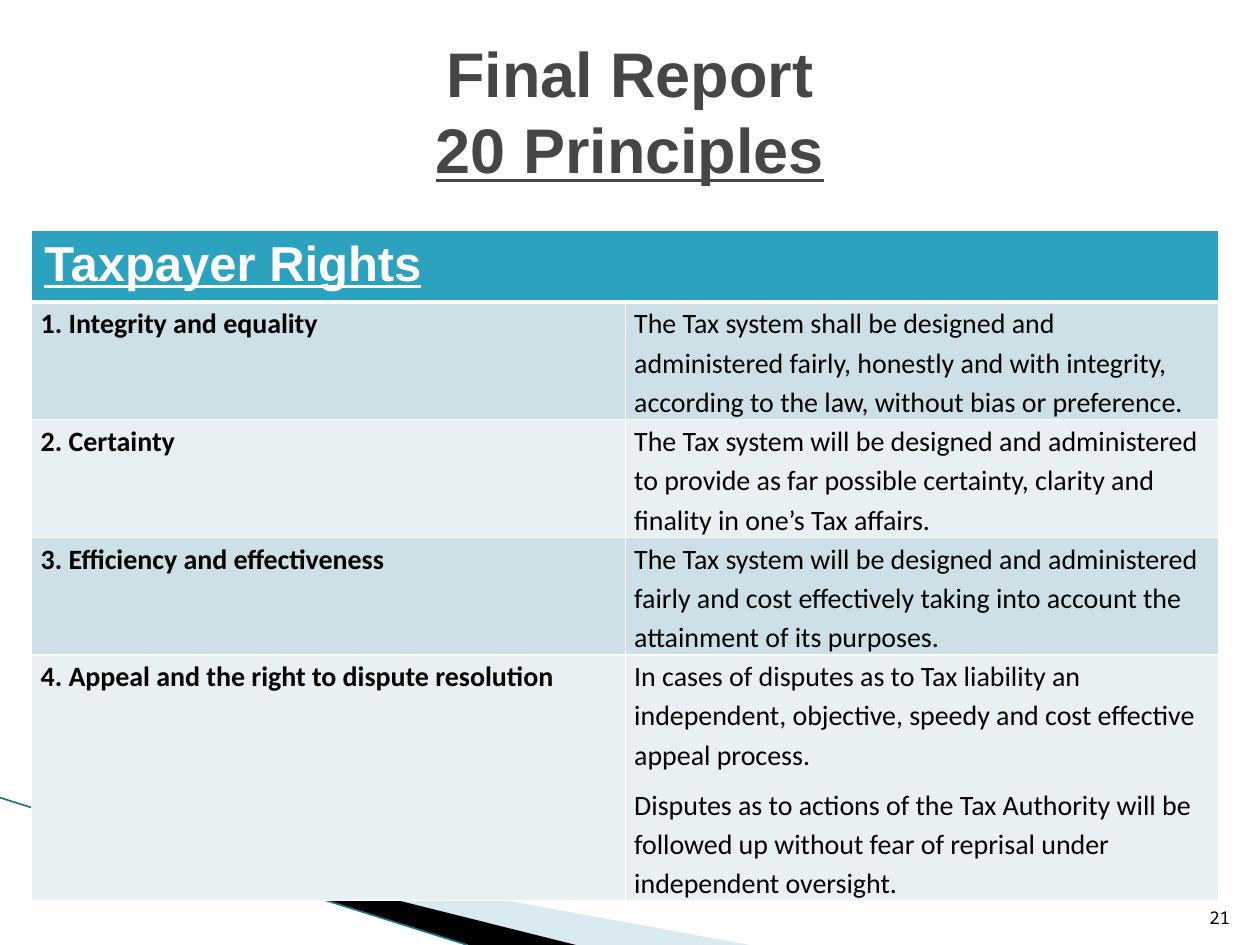
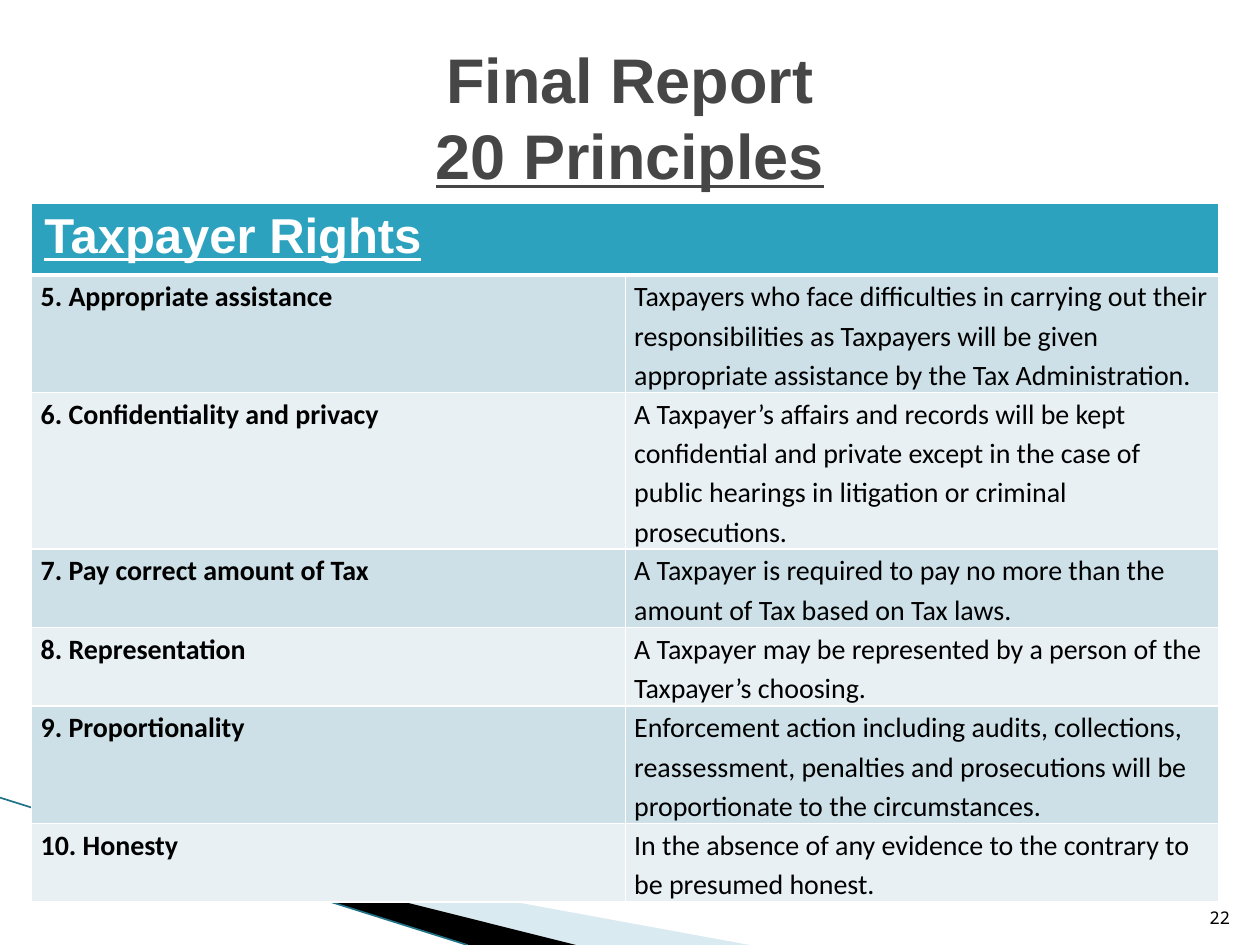
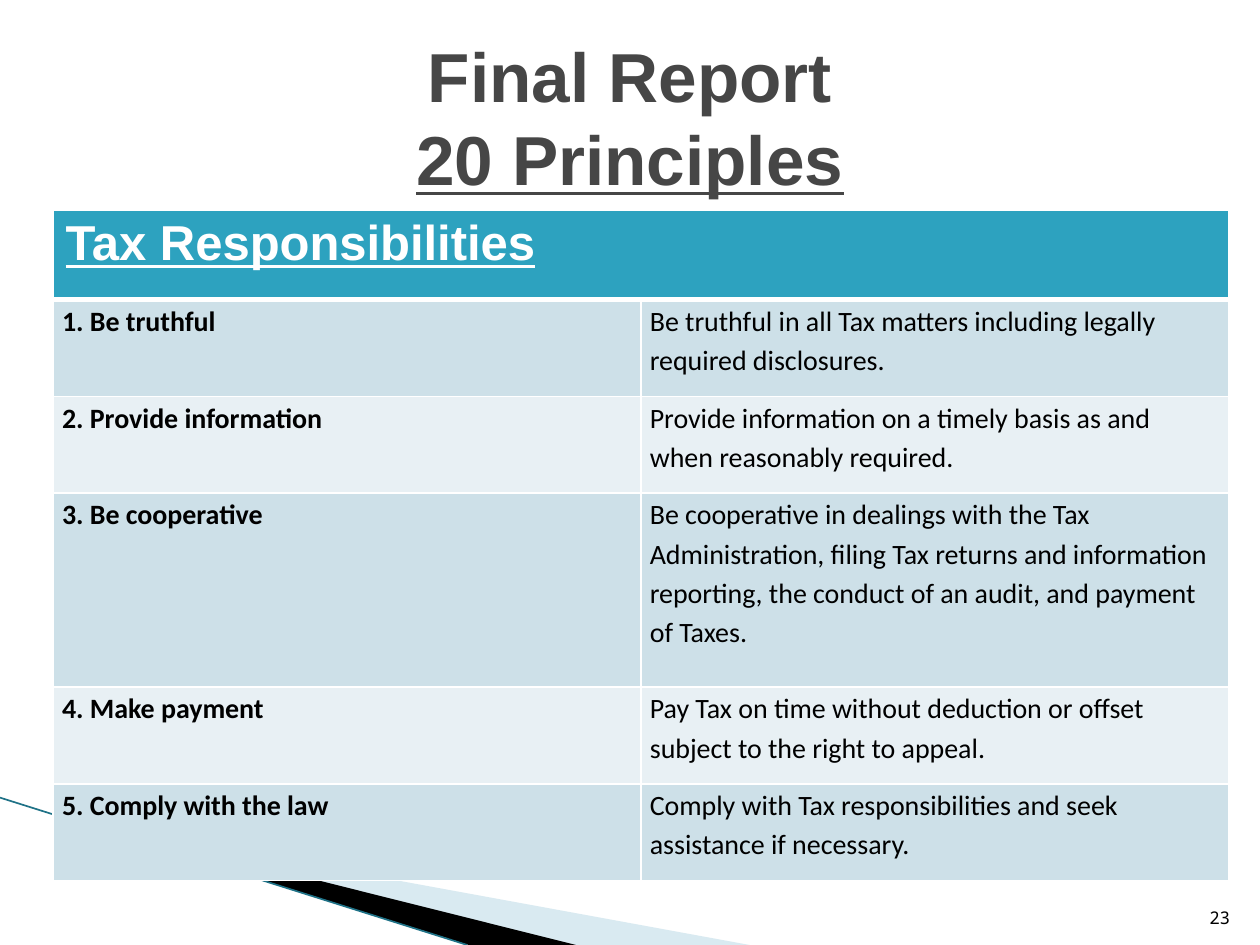
from lxml import etree
from pptx import Presentation
from pptx import util as u
from pptx.dml.color import RGBColor
from pptx.enum import shapes, text
from pptx.oxml import ns

COLOURS = {
    "title": "464646", "header": "2DA2BF", "odd": "CDE0E8", "even": "E8F0F4",
    "white": "FFFFFF", "black": "000000", "wash": "A0CBDC", "edge": "1F7287",
}
TITLE = ("Final Report", "20 Principles")
BANDS = [
    ("wash", 40, [(1.4, 16.54), (15.11, 19.05), (11.58, 19.05), (1.4, 16.51)]),
    ("black", 100, [(1.35, 16.48), (11.61, 19.05), (9.45, 19.05), (1.37, 16.51)]),
]
EDGE = (0, 16.08, 9.42, 19.05)

PAGES = [
    {
        "number": "21", "title_top": 0.64, "title_size": 36,
        "table": (0.64, 4.65, 23.93), "heading": "Taxpayer Rights",
        "heights": [1.37, 2.37, 2.37, 2.37, 4.95],
        "rows": [
            ("1. Integrity and equality",
             ["The Tax system shall be designed and administered fairly, honestly and "
              "with integrity, according to the law, without bias or preference."]),
            ("2. Certainty",
             ["The Tax system will be designed and administered to provide as far "
              "possible certainty, clarity and finality in one’s Tax affairs."]),
            ("3. Efficiency and effectiveness",
             ["The Tax system will be designed and administered fairly and cost "
              "effectively taking into account the attainment of its purposes."]),
            ("4. Appeal and the right to dispute resolution",
             ["In cases of disputes as to Tax liability an independent, objective, "
              "speedy and cost effective appeal process.",
              "Disputes as to actions of the Tax Authority will be followed up without "
              "fear of reprisal under independent oversight."]),
        ],
    },
    {
        "number": "22", "title_top": 0.76, "title_size": 36,
        "table": (0.64, 4.1, 23.93), "heading": "Taxpayer Rights",
        "heights": [1.37, 2.37, 3.16, 1.58, 1.58, 2.37, 1.58],
        "rows": [
            ("5. Appropriate assistance",
             ["Taxpayers who face difficulties in carrying out their responsibilities "
              "as Taxpayers will be given appropriate assistance by the Tax "
              "Administration."]),
            ("6. Confidentiality and privacy",
             ["A Taxpayer’s affairs and records will be kept confidential and private "
              "except in the case of public hearings in litigation or criminal "
              "prosecutions."]),
            ("7. Pay correct amount of Tax",
             ["A Taxpayer is required to pay no more than the amount of Tax based on "
              "Tax laws."]),
            ("8. Representation",
             ["A Taxpayer may be represented by a person of the Taxpayer’s choosing."]),
            ("9. Proportionality",
             ["Enforcement action including audits, collections, reassessment, "
              "penalties and prosecutions will be proportionate to the circumstances."]),
            ("10. Honesty",
             ["In the absence of any evidence to the contrary to be presumed honest."]),
        ],
    },
    {
        "number": "23", "title_top": 0.76, "title_size": 39.6,
        "table": (1.07, 4.24, 23.7), "heading": "Tax Responsibilities",
        "heights": [1.8, 1.95, 1.95, 3.91, 1.95, 1.95],
        "rows": [
            ("1. Be truthful",
             ["Be truthful in all Tax matters including legally required disclosures."]),
            ("2. Provide information",
             ["Provide information on a timely basis as and when reasonably required."]),
            ("3. Be cooperative",
             ["Be cooperative in dealings with the Tax Administration, filing Tax "
              "returns and information reporting, the conduct of an audit, and payment "
              "of Taxes."]),
            ("4. Make payment",
             ["Pay Tax on time without deduction or offset subject to the right to "
              "appeal."]),
            ("5. Comply with the law",
             ["Comply with Tax responsibilities and seek assistance if necessary."]),
        ],
    },
]


def colour(name):
    return RGBColor.from_string(COLOURS[name])


def add_span(para, words, font, size, tint, bold=False, underline=False):
    span = para.add_run()
    span.text = words
    span.font.name = font
    span.font.size = u.Pt(size)
    span.font.color.rgb = colour(tint)
    span.font.bold = bold
    span.font.underline = underline


def add_box(page, left, top, width, height, anchor, align):
    box = page.shapes.add_textbox(u.Cm(left), u.Cm(top), u.Cm(width), u.Cm(height))
    frame = box.text_frame
    frame.word_wrap = True
    frame.vertical_anchor = anchor
    para = frame.paragraphs[0]
    para.alignment = align
    return para


def add_bands(page):
    for tint, opacity, points in BANDS:
        start, *others = [(u.Cm(x), u.Cm(y)) for x, y in points]
        builder = page.shapes.build_freeform(*start)
        builder.add_line_segments(others)
        band = builder.convert_to_shape()
        band.shadow.inherit = False
        band.line.fill.background()
        band.fill.solid()
        band.fill.fore_color.rgb = colour(tint)
        if opacity < 100:
            solid = band.fill._xPr.find(ns.qn("a:solidFill"))
            etree.SubElement(solid[0], ns.qn("a:alpha"), val=str(opacity * 1000))
    edge = page.shapes.add_connector(
        shapes.MSO_CONNECTOR.STRAIGHT, *[u.Cm(value) for value in EDGE])
    edge.line.color.rgb = colour("edge")
    edge.line.width = u.Pt(0.95)
    etree.SubElement(edge._element.spPr, ns.qn("a:effectLst"))


def add_title(page, top, size):
    para = add_box(page, 1.27, top, 22.86, 3.18,
                   text.MSO_ANCHOR.MIDDLE, text.PP_ALIGN.CENTER)
    add_span(para, TITLE[0], "Arial", size, "title", bold=True)
    para.add_line_break()
    add_span(para, TITLE[1], "Arial", size, "title", bold=True, underline=True)


def style_cell(cell, tint, top=1, bottom=1):
    properties = cell._tc.get_or_add_tcPr()
    for side, width in (("L", 1), ("R", 1), ("T", top), ("B", bottom)):
        line = etree.SubElement(properties, ns.qn("a:ln" + side), w=str(u.Pt(width)))
        solid = etree.SubElement(line, ns.qn("a:solidFill"))
        etree.SubElement(solid, ns.qn("a:srgbClr"), val=COLOURS["white"])
    cell.fill.solid()
    cell.fill.fore_color.rgb = colour(tint)


def fill_cell(cell, paragraphs, bold):
    cell.margin_left = cell.margin_right = u.Cm(0.18)
    cell.margin_top = cell.margin_bottom = 0
    frame = cell.text_frame
    for index, words in enumerate(paragraphs):
        para = frame.add_paragraph() if index else frame.paragraphs[0]
        para.line_spacing = 1.15
        if index < len(paragraphs) - 1:
            para.space_after = u.Pt(6)
        add_span(para, words, "Calibri", 16, "black", bold=bold)


def add_principles(page, content):
    left, top, width = content["table"]
    heights = content["heights"]
    table = page.shapes.add_table(len(heights), 2, u.Cm(left), u.Cm(top),
                                  u.Cm(width), u.Cm(sum(heights))).table
    for row, height in zip(table.rows, heights):
        row.height = u.Cm(height)
    for cell in table.rows[0].cells:
        style_cell(cell, "header", bottom=3)
    heading = table.cell(0, 0)
    heading.merge(table.cell(0, 1))
    add_span(heading.text_frame.paragraphs[0], content["heading"],
             "Arial", 28, "white", bold=True, underline=True)
    for index, (name, meaning) in enumerate(content["rows"], 1):
        for column, paragraphs in enumerate(([name], meaning)):
            cell = table.cell(index, column)
            style_cell(cell, "odd" if index % 2 else "even", top=3 if index == 1 else 1)
            fill_cell(cell, paragraphs, bold=column == 0)


def add_number(page, number):
    para = add_box(page, 24.03, 17.81, 1.02, 1.02,
                   text.MSO_ANCHOR.BOTTOM, text.PP_ALIGN.RIGHT)
    add_span(para, number, "Noto Sans Mono", 10, "black")


def main():
    deck = Presentation()
    deck.slide_width, deck.slide_height = u.Cm(25.4), u.Cm(19.05)
    for content in PAGES:
        page = deck.slides.add_slide(deck.slide_layouts[6])
        add_bands(page)
        add_number(page, content["number"])
        add_title(page, content["title_top"], content["title_size"])
        add_principles(page, content)
    deck.save("out.pptx")


if __name__ == "__main__":
    main()
